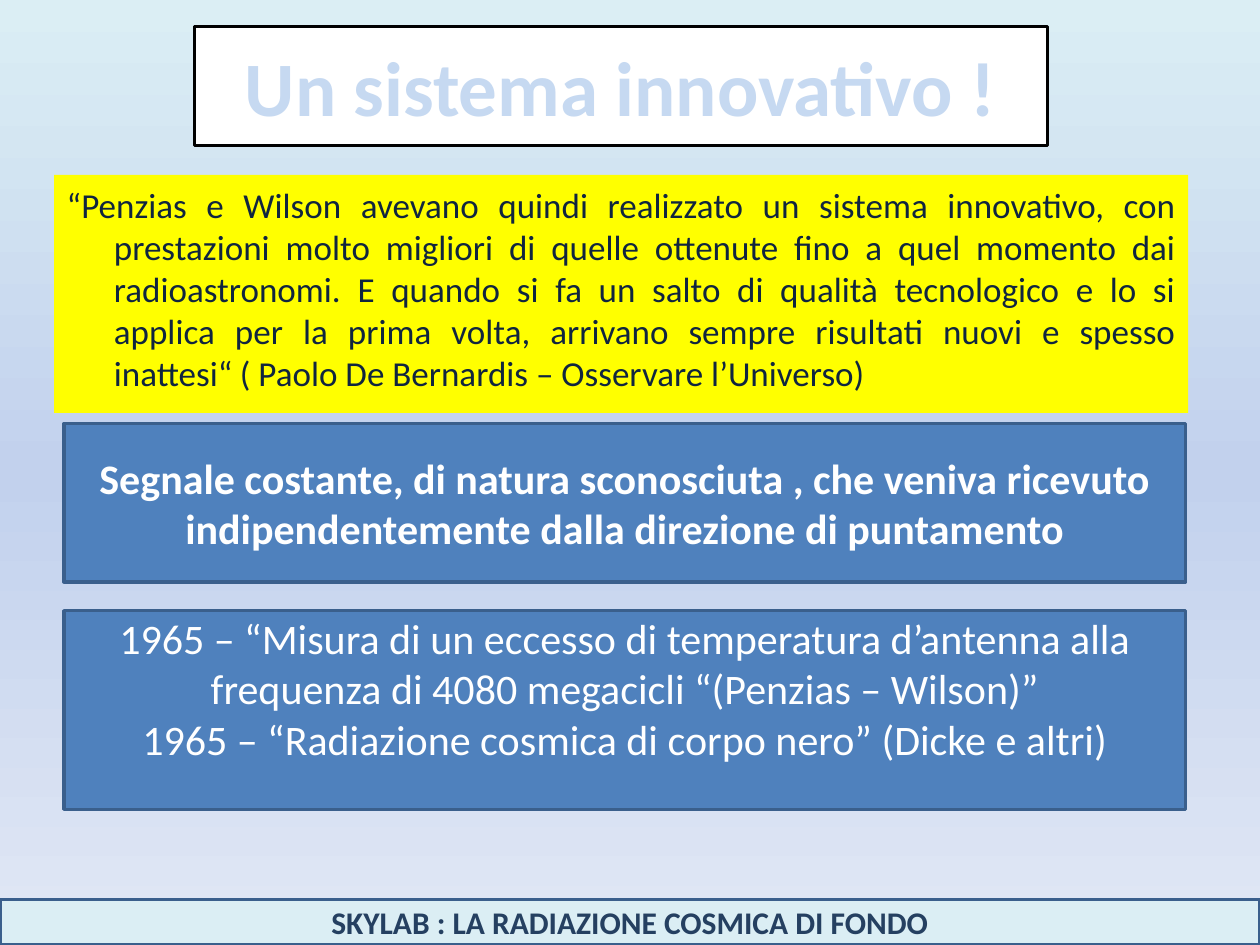
import copy
from dataclasses import dataclass
from typing import Optional

import pptx
import pptx.dml.color
import pptx.enum.shapes
import pptx.enum.text
import pptx.oxml
import pptx.oxml.ns
import pptx.util
from lxml import etree

Pt = pptx.util.Pt
RGBColor = pptx.dml.color.RGBColor
Align = pptx.enum.text.PP_ALIGN
Anchor = pptx.enum.text.MSO_ANCHOR
qn = pptx.oxml.ns.qn

WHITE = RGBColor(0xFF, 0xFF, 0xFF)
BLACK = RGBColor(0x00, 0x00, 0x00)
YELLOW = RGBColor(0xFF, 0xFF, 0x00)
PALE_AQUA = RGBColor(0xDB, 0xEE, 0xF4)
PERIWINKLE = RGBColor(0xC2, 0xD1, 0xED)
MIST = RGBColor(0xE1, 0xE8, 0xF5)
BLUE = RGBColor(0x4F, 0x81, 0xBD)
BORDER_BLUE = RGBColor(0x3A, 0x5F, 0x8C)
FOOTER_NAVY = RGBColor(0x25, 0x40, 0x61)
TITLE_BLUE = RGBColor(0xC6, 0xD9, 0xF1)
TITLE_OUTLINE = RGBColor(0x37, 0x60, 0x92)
QUOTE_NAVY = RGBColor(0x10, 0x25, 0x3F)
QUOTE_OUTLINE = RGBColor(0x0F, 0x24, 0x3E)

SLIDE_WIDTH, SLIDE_HEIGHT = 720, 540
FONT = "Calibri"
HANGING_INDENT = 27
SOURCE_TAB = 135


@dataclass(frozen=True)
class Panel:
    left: float
    top: float
    width: float
    height: float
    text: str
    size: float
    color: RGBColor
    fill: RGBColor
    border: Optional[RGBColor] = BORDER_BLUE
    border_width: float = 2
    bold: bool = False
    align: Align = Align.CENTER
    anchor: Anchor = Anchor.MIDDLE
    top_inset: float = 3.6
    outline: Optional[RGBColor] = None
    outline_width: float = 1
    hanging: bool = False


FOOTER = Panel(0, 514, SLIDE_WIDTH, 26, "SKYLAB : LA RADIAZIONE COSMICA DI FONDO",
               18, FOOTER_NAVY, PALE_AQUA, bold=True)
TITLE = Panel(111, 15, 487.5, 68, "Un sistema innovativo !", 44, TITLE_BLUE, WHITE,
              border=BLACK, border_width=1.75, bold=True, outline=TITLE_OUTLINE)
QUOTE = Panel(31, 100, 648, 136,
              "“Penzias e Wilson avevano quindi realizzato un sistema innovativo, con "
              "prestazioni molto migliori di quelle ottenute fino a quel momento dai "
              "radioastronomi. E quando si fa un salto di qualità tecnologico e lo si "
              "applica per la prima volta, arrivano sempre risultati nuovi e spesso "
              "inattesi“\t( Paolo De Bernardis – Osservare l’Universo)",
              20, QUOTE_NAVY, YELLOW, border=None, align=Align.JUSTIFY, anchor=Anchor.TOP,
              top_inset=5, outline=QUOTE_OUTLINE, outline_width=0.75, hanging=True)
SIGNAL = Panel(36.5, 242, 641, 90.5,
               "Segnale costante, di natura sconosciuta , che veniva ricevuto "
               "indipendentemente dalla direzione di puntamento",
               24, WHITE, BLUE, bold=True)
ARTICLES = Panel(36.5, 349, 641, 113.5,
                 "1965 – “Misura di un eccesso di temperatura d’antenna alla "
                 "frequenza di 4080 megacicli “(Penzias – Wilson)”\n"
                 "1965 – “Radiazione cosmica di corpo nero” (Dicke e altri)",
                 24, WHITE, BLUE, anchor=Anchor.TOP, top_inset=1)


def paint_background(slide: pptx.slide.Slide) -> None:
    """Fill the background with a vertical gradient of three colours."""
    fill = slide.background.fill
    fill.gradient()
    fill.gradient_angle = 270
    stop_list = slide.element.find(".//" + qn("a:gsLst"))
    stop_list.insert(1, copy.deepcopy(stop_list[0]))
    colors = (PALE_AQUA, PERIWINKLE, MIST)
    for stop, position, color in zip(fill.gradient_stops, (0, 0.5, 1), colors):
        stop.position = position
        stop.color.rgb = color


def hang_paragraph(paragraph) -> None:
    """Indent all lines but the first, with a tab stop for the quote's source."""
    properties = paragraph._p.get_or_add_pPr()
    properties.set("marL", str(Pt(HANGING_INDENT)))
    properties.set("indent", str(Pt(-HANGING_INDENT)))
    tabs = etree.SubElement(properties, qn("a:tabLst"))
    etree.SubElement(tabs, qn("a:tab"), pos=str(Pt(SOURCE_TAB)), algn="l")


def outline_run(run, color: RGBColor, width: float) -> None:
    line = pptx.oxml.parse_xml(
        f'<a:ln xmlns:a="http://schemas.openxmlformats.org/drawingml/2006/main" '
        f'w="{Pt(width)}"><a:solidFill><a:srgbClr val="{color}"/></a:solidFill></a:ln>')
    run.font._element.insert(0, line)


def draw_panel(slide: pptx.slide.Slide, panel: Panel) -> None:
    shape = slide.shapes.add_shape(
        pptx.enum.shapes.MSO_SHAPE.RECTANGLE,
        Pt(panel.left), Pt(panel.top), Pt(panel.width), Pt(panel.height))
    shape.shadow.inherit = False
    shape.fill.solid()
    shape.fill.fore_color.rgb = panel.fill
    if panel.border is None:
        shape.line.fill.background()
    else:
        shape.line.color.rgb = panel.border
        shape.line.width = Pt(panel.border_width)

    frame = shape.text_frame
    frame.word_wrap = True
    frame.vertical_anchor = panel.anchor
    frame.margin_top = Pt(panel.top_inset)
    frame.text = panel.text
    for paragraph in frame.paragraphs:
        paragraph.alignment = panel.align
        if panel.hanging:
            hang_paragraph(paragraph)
        for run in paragraph.runs:
            run.font.name = FONT
            run.font.size = Pt(panel.size)
            run.font.bold = panel.bold
            run.font.color.rgb = panel.color
            if panel.outline is not None:
                outline_run(run, panel.outline, panel.outline_width)


def main() -> None:
    presentation = pptx.Presentation()
    presentation.slide_width = Pt(SLIDE_WIDTH)
    presentation.slide_height = Pt(SLIDE_HEIGHT)
    slide = presentation.slides.add_slide(presentation.slide_layouts[6])
    paint_background(slide)
    for panel in (FOOTER, TITLE, QUOTE, SIGNAL, ARTICLES):
        draw_panel(slide, panel)
    presentation.save("out.pptx")


if __name__ == "__main__":
    main()
